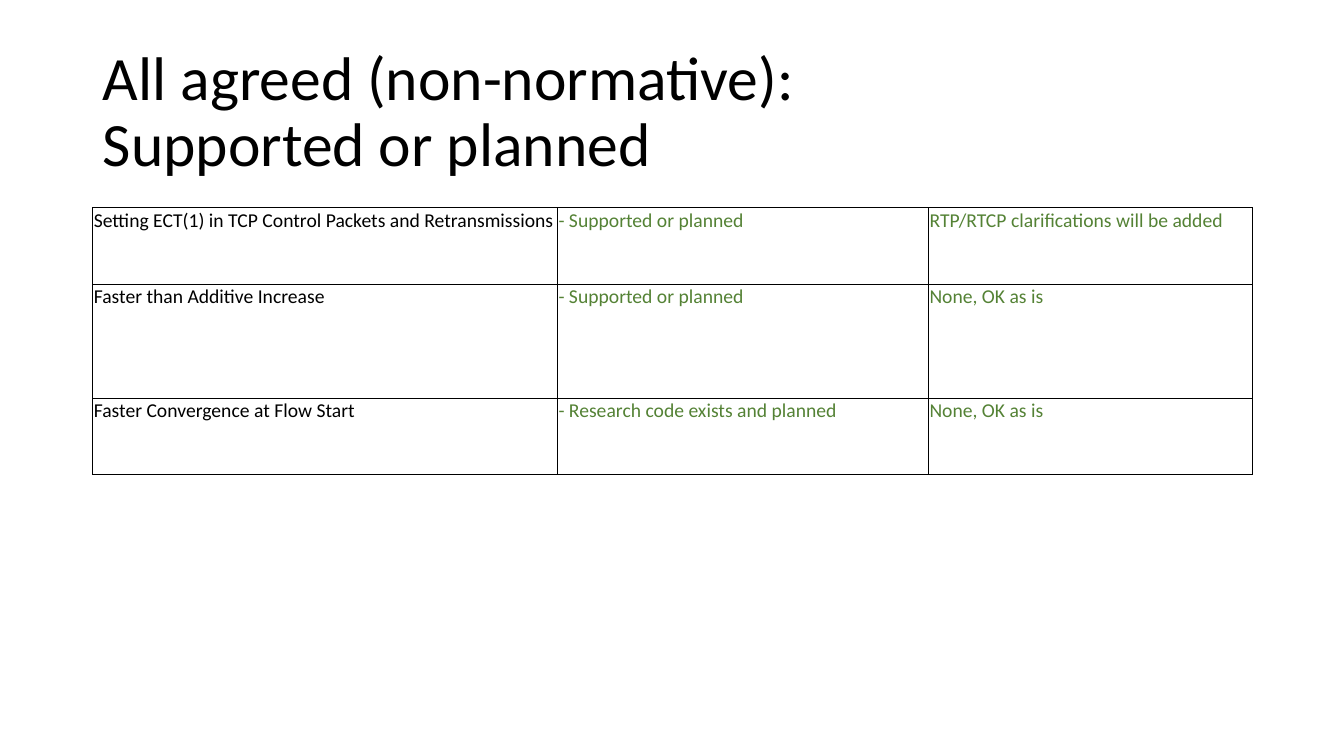
import pptx
import pptx.util
import pptx.dml.color
import pptx.enum.text
import pptx.oxml
import pptx.oxml.ns

TITLE = "All agreed (non-normative): \vSupported or planned"
ROWS = [
    ("Setting ECT(1) in TCP Control Packets and Retransmissions",
     "- Supported or planned", "RTP/RTCP clarifications will be added"),
    ("Faster than Additive Increase", "- Supported or planned", "None, OK as is"),
    ("Faster Convergence at Flow Start", "- Research code exists and planned", "None, OK as is"),
]
COLORS = {"text": "000000", "agreed": "548235", "border": "000000"}
FONT = "Calibri"
WIDTH, HEIGHT = 13.33, 7.5
LEFT, CONTENT_WIDTH = 0.92, 11.5
TITLE_TOP, TITLE_HEIGHT = 0.4, 1.45
TABLE_TOP = 2.06
COLUMN_WIDTHS = (4.61, 3.68, 3.21)
ROW_HEIGHTS = (0.76, 1.13, 0.76)
INSET = 0.01

inches = pptx.util.Inches


def style(paragraph, size, color):
    for span in paragraph.runs:
        span.font.name = FONT
        span.font.size = pptx.util.Pt(size)
        span.font.color.rgb = pptx.dml.color.RGBColor.from_string(COLORS[color])


def add_borders(cell):
    properties = cell._tc.get_or_add_tcPr()
    for side in ("lnL", "lnR", "lnT", "lnB"):
        properties.append(pptx.oxml.parse_xml(
            f'<a:{side} {pptx.oxml.ns.nsdecls("a")} w="{pptx.util.Pt(1)}"><a:solidFill>'
            f'<a:srgbClr val="{COLORS["border"]}"/></a:solidFill></a:{side}>'))


def add_title(page):
    title = page.shapes.title
    title.left, title.top = inches(LEFT), inches(TITLE_TOP)
    title.width, title.height = inches(CONTENT_WIDTH), inches(TITLE_HEIGHT)
    frame = title.text_frame
    frame.text = TITLE
    frame.word_wrap = True
    frame.auto_size = pptx.enum.text.MSO_AUTO_SIZE.NONE
    frame.vertical_anchor = pptx.enum.text.MSO_ANCHOR.MIDDLE
    paragraph = frame.paragraphs[0]
    paragraph.alignment = pptx.enum.text.PP_ALIGN.LEFT
    paragraph.line_spacing = 0.9
    style(paragraph, 44, "text")


def add_status_table(page):
    table = page.shapes.add_table(
        len(ROWS), len(COLUMN_WIDTHS), inches(LEFT), inches(TABLE_TOP),
        inches(CONTENT_WIDTH), inches(sum(ROW_HEIGHTS))).table
    table.first_row = table.horz_banding = False
    for column, width in zip(table.columns, COLUMN_WIDTHS):
        column.width = inches(width)
    for row, height, texts in zip(table.rows, ROW_HEIGHTS, ROWS):
        row.height = inches(height)
        for index, (cell, text) in enumerate(zip(row.cells, texts)):
            cell.text_frame.text = text
            cell.margin_left = cell.margin_right = cell.margin_top = inches(INSET)
            cell.margin_bottom = 0
            cell.vertical_anchor = pptx.enum.text.MSO_ANCHOR.TOP
            style(cell.text_frame.paragraphs[0], 14, "agreed" if index else "text")
            add_borders(cell)
            cell.fill.background()


def main():
    deck = pptx.Presentation()
    deck.slide_width, deck.slide_height = inches(WIDTH), inches(HEIGHT)
    page = deck.slides.add_slide(deck.slide_layouts[5])
    add_title(page)
    add_status_table(page)
    deck.save("out.pptx")


if __name__ == "__main__":
    main()
